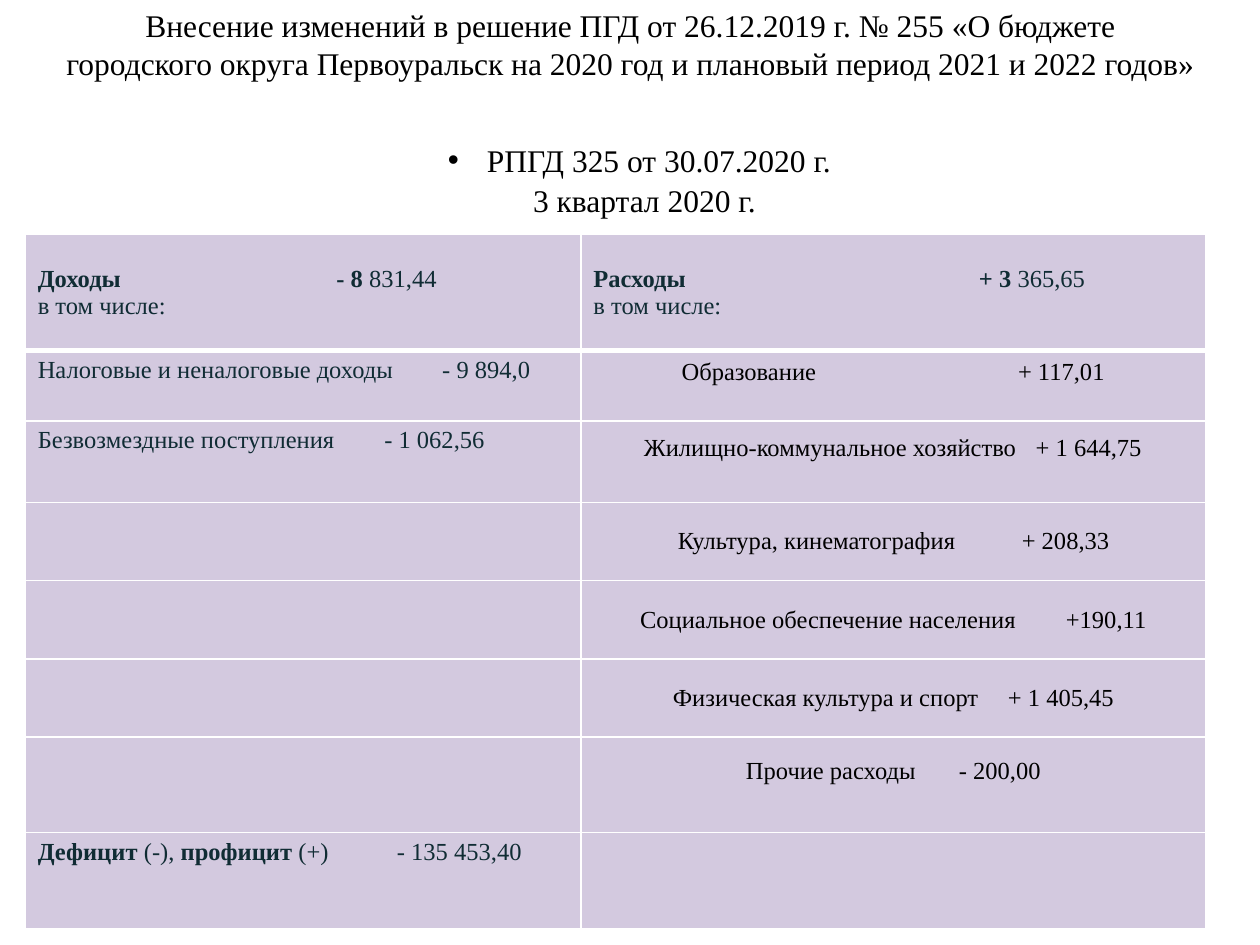
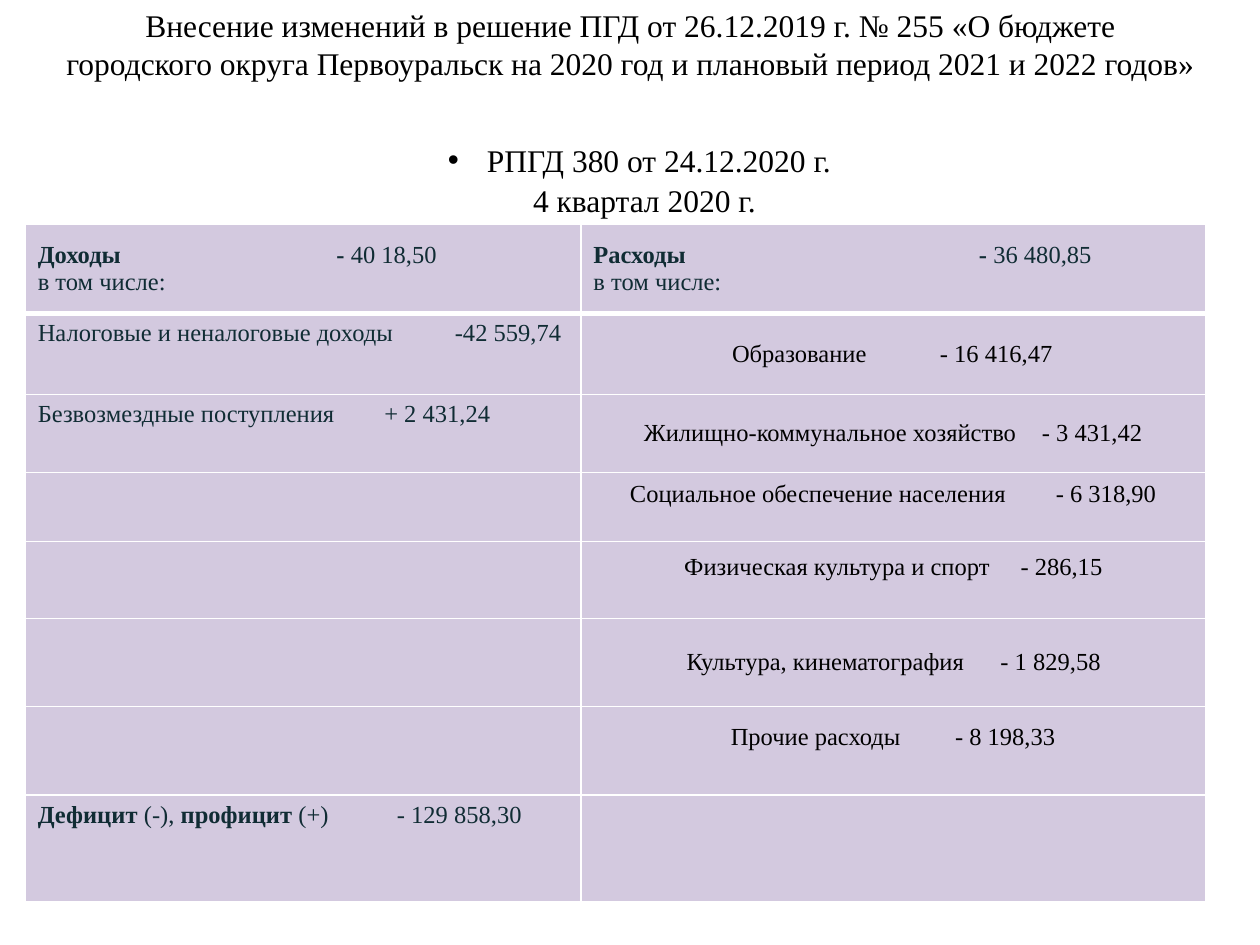
"""Build two slides on quarterly amendments to the 2020 city budget."""
from dataclasses import dataclass
from typing import NamedTuple

from lxml import etree
from pptx import Presentation
from pptx.dml.color import RGBColor
from pptx.enum.text import MSO_ANCHOR, MSO_AUTO_SIZE, PP_ALIGN
from pptx.oxml.ns import qn
from pptx.util import Inches, Pt

CENTER, LEFT = PP_ALIGN.CENTER, PP_ALIGN.LEFT
TOP, MIDDLE = MSO_ANCHOR.TOP, MSO_ANCHOR.MIDDLE
FIT_SHAPE = MSO_AUTO_SIZE.SHAPE_TO_FIT_TEXT


@dataclass(frozen=True)
class Theme:
    """Colours, type and line sizes shared by the slides."""
    font: str = "Times New Roman"
    heading_size: float = 18
    cell_size: float = 14
    black: str = "000000"
    ink: str = "102C34"
    cell_fill: str = "CCC1DA"
    cell_opacity: int = 86
    border: str = "FFFFFF"
    border_width: float = 1
    header_border_width: float = 3


THEME = Theme()
TITLE = (
    "Внесение изменений в решение ПГД от 26.12.2019 г. № 255 «О бюджете",
    "городского округа Первоуральск на 2020 год и плановый период 2021 и 2022 годов»",
)
COLUMN_WIDTHS = (4.41, 4.96)
CELL_MARGIN = 0.1
LINE_HEIGHT = 0.21
BULLET_INDENT = 0.31


class Span(NamedTuple):
    """A stretch of text of one weight."""
    text: str
    bold: bool = False


class Entry(NamedTuple):
    """A budget line: spans split by a tab, tab position, indent and lift."""
    spans: tuple[Span, ...]
    tab: float
    indent: float = 0
    raised: bool = False
    color: str = THEME.black
    anchor: MSO_ANCHOR = MIDDLE
    note: str = ""


class Quarter(NamedTuple):
    """The contents of one slide."""
    decision: str
    period: str
    table_top: float
    row_heights: tuple[float, ...]
    incomes: dict[int, Entry]
    expenses: dict[int, Entry]


def total(label: str, bold_amount: str, amount: str, tab: float) -> Entry:
    """Return a header entry with a bold label."""
    spans = (Span(f"{label}\t{bold_amount}", True), Span(amount))
    return Entry(spans, tab, color=THEME.ink, note="в том числе:")


def income(label: str, amount: str, tab: float) -> Entry:
    """Return an income entry set at the top of its cell."""
    return Entry((Span(f"{label}\t{amount}"),), tab, color=THEME.ink, anchor=TOP)


def expense(label: str, amount: str, start: float, amount_at: float,
            raised: bool = False) -> Entry:
    """Return an expense entry whose label and amount start at given offsets."""
    return Entry((Span(f"{label}\t{amount}"),), amount_at - start, start, raised)


def balance(amount: str) -> Entry:
    """Return the deficit or surplus entry."""
    spans = (Span("Дефицит ", True), Span("(-), "), Span("профицит ", True),
             Span(f"(+)\t{amount}"))
    return Entry(spans, 2.85, color=THEME.ink, anchor=TOP)


QUARTERS = (
    Quarter(
        "РПГД 325 от 30.07.2020 г.", "3 квартал 2020 г.", 1.86,
        (0.92, 0.56, 0.65, 0.62, 0.62, 0.62, 0.76, 0.76),
        {
            0: total("Доходы", "- 8", " 831,44", 2.37),
            1: income("Налоговые и неналоговые доходы", "- 9 894,0", 3.21),
            2: income("Безвозмездные поступления", "- 1 062,56", 2.75),
            7: balance("- 135 453,40"),
        },
        {
            0: total("Расходы", "+ 3", " 365,65", 3.06),
            1: expense("Образование", "+ 117,01", 0.7, 3.37, True),
            2: expense("Жилищно-коммунальное хозяйство", "+ 1 644,75", 0.4, 3.51, True),
            3: expense("Культура, кинематография", "+ 208,33", 0.67, 3.4),
            4: expense("Социальное обеспечение населения", "+190,11", 0.37, 3.75),
            5: expense("Физическая культура и спорт", "+ 1 405,45", 0.63, 3.29),
            6: expense("Прочие расходы", "- 200,00", 1.21, 2.9, True),
        },
    ),
    Quarter(
        "РПГД 380 от 24.12.2020 г.", "4 квартал 2020 г.", 1.78,
        (0.71, 0.64, 0.62, 0.55, 0.61, 0.7, 0.7, 0.85),
        {
            0: total("Доходы", "- ", "40 18,50", 2.37),
            1: income("Налоговые и неналоговые доходы", "-42 559,74", 3.31),
            2: income("Безвозмездные поступления", "+ 2 431,24", 2.75),
            7: balance("- 129 858,30"),
        },
        {
            0: total("Расходы", "- ", "36 480,85", 3.06),
            1: expense("Образование", "- 16 416,47", 1.1, 2.75),
            2: expense("Жилищно-коммунальное хозяйство", "- 3 431,42", 0.4, 3.56),
            3: expense("Социальное обеспечение населения", "- 6 318,90", 0.29, 3.67, True),
            4: expense("Физическая культура и спорт", "- 286,15", 0.72, 3.39, True),
            5: expense("Культура, кинематография", "- 1 829,58", 0.74, 3.23),
            6: expense("Прочие расходы", "- 8 198,33", 1.09, 2.87, True),
        },
    ),
)


def style_paragraph(paragraph, size: float, color: str, alignment: PP_ALIGN) -> None:
    """Set the font and alignment of a paragraph."""
    paragraph.alignment = alignment
    paragraph.font.name = THEME.font
    paragraph.font.size = Pt(size)
    paragraph.font.color.rgb = RGBColor.from_string(color)


def add_bullet(paragraph) -> None:
    """Give a paragraph a hanging round bullet."""
    properties = paragraph._p.get_or_add_pPr()
    properties.set("marL", str(Inches(BULLET_INDENT)))
    properties.set("indent", str(-Inches(BULLET_INDENT)))
    etree.SubElement(properties, qn("a:buFont"), typeface="Arial")
    etree.SubElement(properties, qn("a:buChar"), char="•")


def add_tab(paragraph, position: float) -> None:
    """Add a left tab stop to a paragraph."""
    tabs = etree.SubElement(paragraph._p.get_or_add_pPr(), qn("a:tabLst"))
    etree.SubElement(tabs, qn("a:tab"), pos=str(Inches(position)), algn="l")


def add_heading(page, lines: tuple[str, ...], left: float, top: float,
                width: float, height: float, bulleted: bool = False) -> None:
    """Add a centred heading, one paragraph a line."""
    box = page.shapes.add_textbox(Inches(left), Inches(top), Inches(width), Inches(height))
    frame = box.text_frame
    frame.word_wrap = True
    frame.auto_size = FIT_SHAPE
    frame.text = "\n".join(lines)
    for paragraph in frame.paragraphs:
        if bulleted:
            add_bullet(paragraph)
        style_paragraph(paragraph, THEME.heading_size, THEME.black, CENTER)


def style_cell(cell, row: int) -> None:
    """Set the translucent fill and the borders of a cell."""
    cell.fill.solid()
    cell.fill.fore_color.rgb = RGBColor.from_string(THEME.cell_fill)
    properties = cell._tc.get_or_add_tcPr()
    color = properties.find(f".//{qn('a:srgbClr')}")
    etree.SubElement(color, qn("a:alpha"), val=str(THEME.cell_opacity * 1000))
    thick_edge = {0: "lnB", 1: "lnT"}.get(row)
    for position, edge in enumerate(("lnL", "lnR", "lnT", "lnB")):
        width = THEME.header_border_width if edge == thick_edge else THEME.border_width
        line = etree.Element(qn(f"a:{edge}"), w=str(Pt(width)))
        fill = etree.SubElement(line, qn("a:solidFill"))
        etree.SubElement(fill, qn("a:srgbClr"), val=THEME.border)
        properties.insert(position, line)


def fill_cell(cell, entry: Entry) -> None:
    """Write a budget entry into a cell."""
    cell.vertical_anchor = entry.anchor
    cell.margin_left = Inches(CELL_MARGIN + entry.indent)
    cell.margin_right = Inches(CELL_MARGIN)
    cell.margin_top = Inches(0.05)
    cell.margin_bottom = Inches(0.05 + LINE_HEIGHT * entry.raised)
    paragraph = cell.text_frame.paragraphs[0]
    add_tab(paragraph, entry.tab)
    for text, bold in entry.spans:
        span = paragraph.add_run()
        span.text = text
        span.font.bold = bold
    if entry.note:
        cell.text_frame.add_paragraph().text = entry.note
    for paragraph in cell.text_frame.paragraphs:
        style_paragraph(paragraph, THEME.cell_size, entry.color, LEFT)


def add_budget_table(page, quarter: Quarter) -> None:
    """Add the table of incomes and expenses."""
    heights = quarter.row_heights
    table = page.shapes.add_table(
        len(heights), len(COLUMN_WIDTHS), Inches(0.2), Inches(quarter.table_top),
        Inches(sum(COLUMN_WIDTHS)), Inches(sum(heights))).table
    table.first_row = False
    table.horz_banding = False
    for row, height in zip(table.rows, heights):
        row.height = Inches(height)
    for index, entries in enumerate((quarter.incomes, quarter.expenses)):
        table.columns[index].width = Inches(COLUMN_WIDTHS[index])
        for row in range(len(heights)):
            cell = table.cell(row, index)
            style_cell(cell, row)
            if row in entries:
                fill_cell(cell, entries[row])


def main() -> None:
    """Build and save the deck."""
    deck = Presentation()
    deck.slide_width, deck.slide_height = Inches(10), Inches(7.5)
    for quarter in QUARTERS:
        page = deck.slides.add_slide(deck.slide_layouts[6])
        add_budget_table(page, quarter)
        add_heading(page, TITLE, 0.2, 0, 9.61, 0.71)
        add_heading(page, (quarter.decision,), 0.35, 1.07, 9.45, 0.4, bulleted=True)
        add_heading(page, (quarter.period,), 3.03, 1.39, 4.17, 0.4)
    deck.save("out.pptx")


if __name__ == "__main__":
    main()
